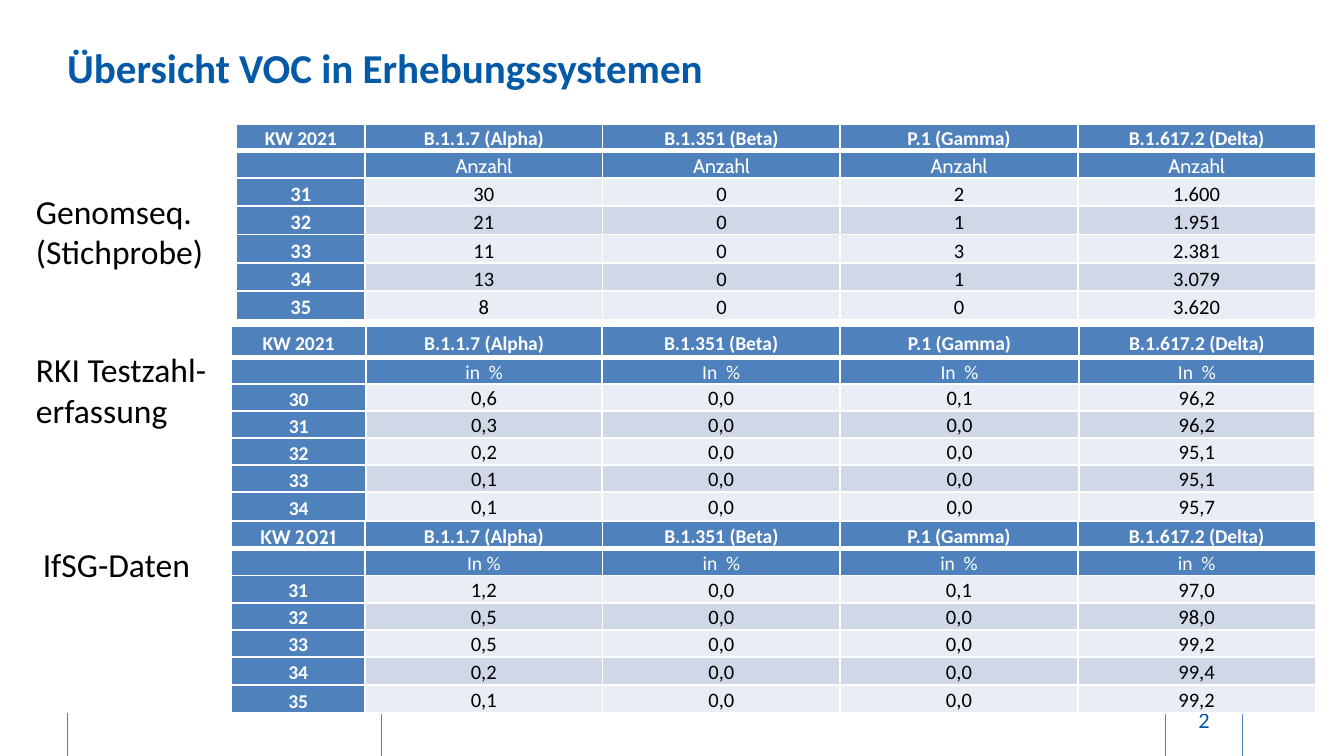
from pptx import Presentation
from pptx.dml.color import RGBColor
from pptx.enum.shapes import MSO_CONNECTOR
from pptx.enum.text import MSO_ANCHOR, MSO_AUTO_SIZE, PP_ALIGN
from pptx.oxml.ns import qn
from pptx.util import Cm, Pt
from lxml.etree import SubElement

BLUE, TITLE_BLUE, WHITE, BLACK = "4F81BD", "045AA6", "FFFFFF", "000000"
BANDS = ("E9EDF4", "D0D8E8")
VARIANTS = ["B.1.1.7 (Alpha)", "B.1.351 (Beta)", "P.1 (Gamma)", "B.1.617.2 (Delta)"]

HEADER = {"size": Pt(10.5), "name": "Calibri", "bold": True, "color": WHITE}
UNIT = {**HEADER, "bold": False}
VALUE = {"size": Pt(11), "name": "Calibri", "bold": False, "color": BLACK}
LABEL = {**VALUE, "size": Pt(18)}

WIDE = {"margin_left": Cm(0.13), "margin_right": Cm(0.13), "margin_top": 0, "margin_bottom": 0}
TIGHT = {"margin_left": Cm(0.02), "margin_right": Cm(0.02), "margin_top": Cm(0.02), "margin_bottom": 0}
NO_SIDES = {"margin_left": 0, "margin_right": 0}

SEQUENCING = {
    "at": (4.47, 2.34), "columns": [2.43] + [4.49] * 4, "rows": [0.41] * 2 + [0.48] * 5,
    "units": ["Anzahl"] * 4, "unit_font": "Cabin", "week_font": "Calibri",
    "week_size": 11, "value_margins": WIDE, "value_spacing": 1.15, "low_weeks": (),
    "weeks": {
        "31": ["30", "0", "2", "1.600"],
        "32": ["21", "0", "1", "1.951"],
        "33": ["11", "0", "3", "2.381"],
        "34": ["13", "0", "1", "3.079"],
        "35": ["8", "0", "0", "3.620"],
    },
}
TEST_COUNTS = {
    "at": (4.37, 6.17), "columns": [2.55, 4.46, 4.5, 4.51, 4.46],
    "rows": [0.58, 0.38, 0.33, 0.33, 0.33, 0.38, 0.3],
    "units": ["in  %", "In  %", "In  %", "In  %"], "unit_font": "Calibri", "week_font": "Calibri",
    "week_size": 10.5, "value_margins": TIGHT, "value_spacing": 1.0, "low_weeks": ("34",),
    "weeks": {
        "30": ["0,6", "0,0", "0,1", "96,2"],
        "31": ["0,3", "0,0", "0,0", "96,2"],
        "32": ["0,2", "0,0", "0,0", "95,1"],
        "33": ["0,1", "0,0", "0,0", "95,1"],
        "34": ["0,1", "0,0", "0,0", "95,7"],
    },
}
NOTIFICATIONS = {
    "at": (4.37, 9.86), "columns": [2.53] + [4.49] * 4, "rows": [0.41] * 2 + [0.48] * 4 + [0.51],
    "units": ["In %", "in  %", "in  %", "in  %"], "unit_font": "Calibri", "week_font": "Cabin",
    "week_size": 10.5, "value_margins": TIGHT, "value_spacing": 1.0, "low_weeks": ("34", "35"),
    "weeks": {
        "31": ["1,2", "0,0", "0,1", "97,0"],
        "32": ["0,5", "0,0", "0,0", "98,0"],
        "33": ["0,5", "0,0", "0,0", "99,2"],
        "34": ["0,2", "0,0", "0,0", "99,4"],
        "35": ["0,1", "0,0", "0,0", "99,2"],
    },
}


def rgb(code):
    return RGBColor.from_string(code)


def apply(target, values):
    for attribute, value in values.items():
        if attribute == "color":
            target.color.rgb = rgb(value)
        else:
            setattr(target, attribute, value)


def add_text(slide, text, box, style, frame_format, align=PP_ALIGN.LEFT):
    frame = slide.shapes.add_textbox(*(Cm(length) for length in box)).text_frame
    apply(frame, frame_format)
    frame.text = text
    paragraph = frame.paragraphs[0]
    paragraph.alignment = align
    for run in paragraph.runs:
        apply(run.font, style)
    # Line breaks take their height from the surrounding text
    paragraph.font.size = style["size"]


def add_divider(slide, x):
    line = slide.shapes.add_connector(MSO_CONNECTOR.STRAIGHT, Cm(x), Cm(13.47), Cm(x), Cm(14.33))
    line.line.color.rgb = rgb(BLUE)
    line.line.width = Pt(0.5)
    SubElement(line._element.spPr, qn("a:effectLst"))


def add_borders(cell, widths):
    """Draw white borders, with widths in points by side letter."""
    properties = cell._tc.get_or_add_tcPr()
    for side in "LRTB":
        border = SubElement(properties, qn(f"a:ln{side}"), w=str(Pt(widths.get(side, 1))))
        fill = SubElement(border, qn("a:solidFill"))
        SubElement(fill, qn("a:srgbClr"), val=WHITE)


def fill_cell(cell, text, style, color, borders, margins=WIDE, spacing=1.15, anchor=MSO_ANCHOR.MIDDLE):
    add_borders(cell, borders)
    cell.fill.solid()
    cell.fill.fore_color.rgb = rgb(color)
    apply(cell, {**margins, "vertical_anchor": anchor})
    paragraph = cell.text_frame.paragraphs[0]
    apply(paragraph, {"alignment": PP_ALIGN.CENTER, "line_spacing": spacing})
    if text:
        run = paragraph.add_run()
        run.text = text
        apply(run.font, style)
    else:
        paragraph._p.get_or_add_endParaRPr().set("sz", str(int(style["size"].pt * 100)))


def add_variant_table(slide, survey):
    columns, rows = survey["columns"], survey["rows"]
    left, top = survey["at"]
    table = slide.shapes.add_table(len(rows), len(columns), Cm(left), Cm(top),
                                   Cm(sum(columns)), Cm(sum(rows))).table
    apply(table, {"first_row": False, "horz_banding": False})
    for column, width in zip(table.columns, columns):
        column.width = Cm(width)
    for row, height in zip(table.rows, rows):
        row.height = Cm(height)

    for index, text in enumerate(["KW 2021"] + VARIANTS):
        font = "Calibri" if index else survey["week_font"]
        fill_cell(table.cell(0, index), text, {**HEADER, "name": font}, BLUE, {"B": 3})
    for index, text in enumerate([""] + survey["units"]):
        fill_cell(table.cell(1, index), text, {**UNIT, "name": survey["unit_font"]}, BLUE, {"T": 3})

    week_style = {**HEADER, "size": Pt(survey["week_size"])}
    for index, (week, values) in enumerate(survey["weeks"].items()):
        row = index + 2
        low = week in survey["low_weeks"]
        fill_cell(table.cell(row, 0), week, week_style, BLUE, {}, TIGHT if low else WIDE,
                  anchor=MSO_ANCHOR.BOTTOM if low else MSO_ANCHOR.MIDDLE)
        for column, value in enumerate(values, start=1):
            fill_cell(table.cell(row, column), value, VALUE, BANDS[index % 2], {},
                      survey["value_margins"], survey["value_spacing"], MSO_ANCHOR.BOTTOM)


def main():
    presentation = Presentation()
    apply(presentation, {"slide_width": Cm(25.4), "slide_height": Cm(14.29)})
    slide = presentation.slides.add_slide(presentation.slide_layouts[6])

    for x in (1.28, 7.21, 22.02, 23.49):
        add_divider(slide, x)

    centred = {**NO_SIDES, "word_wrap": True, "vertical_anchor": MSO_ANCHOR.MIDDLE}
    add_text(slide, "2", (22.07, 13.23, 1.37, 0.76),
             {**VALUE, "size": Pt(12), "color": TITLE_BLUE}, centred, PP_ALIGN.CENTER)
    add_text(slide, "Übersicht VOC in Erhebungssystemen", (1.27, 0.28, 22.17, 1.98),
             {**HEADER, "size": Pt(22), "color": TITLE_BLUE},
             {**centred, "margin_top": 0, "margin_bottom": 0})

    for survey in (SEQUENCING, TEST_COUNTS, NOTIFICATIONS):
        add_variant_table(slide, survey)

    growing = {"word_wrap": False, "auto_size": MSO_AUTO_SIZE.SHAPE_TO_FIT_TEXT}
    for text, box in (
        ("Genomseq.\v(Stichprobe)", (0.43, 3.48, 3.71, 1.8)),
        ("RKI Testzahl-\verfassung", (0.43, 6.48, 3.76, 1.8)),
        ("IfSG-Daten", (0.56, 10.16, 3.33, 1.02)),
    ):
        add_text(slide, text, box, LABEL, growing)

    presentation.save("out.pptx")


if __name__ == "__main__":
    main()
